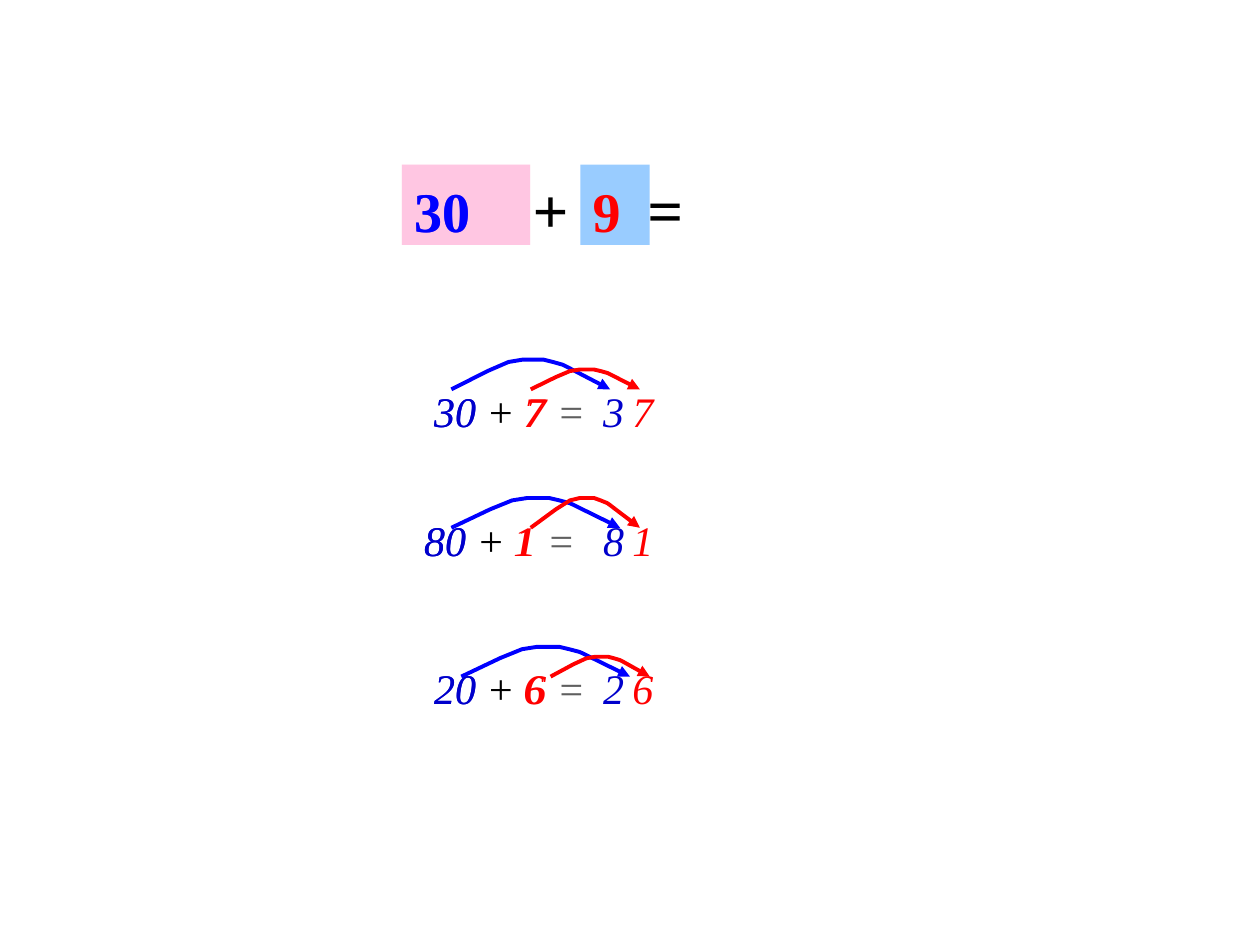
import pptx
import pptx.util
import pptx.dml.color
import pptx.enum.shapes
import pptx.enum.text
import pptx.oxml.ns
import lxml.etree

Cm = pptx.util.Cm
Pt = pptx.util.Pt
qn = pptx.oxml.ns.qn

FONT = "Times New Roman"
COLORS = {
    "tens": "0000CC",
    "units": "FF0000",
    "bright": "0000FF",
    "sign": "000000",
    "equals": "5F5F5F",
    "pink": "FF99CC",
    "sky": "99CCFF",
}
ARC = [
    (0, 0), (0.23, 0.62), (0.36, 0.92), (0.45, 1), (0.58, 1),
    (0.64, 0.92), (0.7, 0.83), (0.72, 0.78), (0.82, 0.5), (1, 0),
]


def rgb(name):
    return pptx.dml.color.RGBColor.from_string(COLORS[name])


def style(font, size, color, bold=False, italic=False):
    font.name = FONT
    font.size = Pt(size)
    font.bold = bold
    font.italic = italic
    font.color.rgb = rgb(color)


def add_text(page, left, top, width, height=1.27):
    box = page.shapes.add_textbox(Cm(left), Cm(top), Cm(width), Cm(height))
    box.text_frame.word_wrap = True
    return box.text_frame.paragraphs[0]


def add_number(page, text, left, top, width, color):
    para = add_text(page, left, top, width)
    para.text = text
    style(para.font, 24, color, italic=True)


def add_sum(page, tens, units, left, top):
    para = add_text(page, left, top, 4.2)
    parts = [(f"{tens} ", "tens"), ("+ ", "sign"), (units, "units"), (" =", "equals")]
    for text, color in parts:
        span = para.add_run()
        span.text = text
        style(span.font, 24, color, italic=True)


def add_arc(page, start, end, base, height, color):
    points = [
        (Cm(start + (end - start) * across), Cm(base - height * up))
        for across, up in ARC
    ]
    builder = page.shapes.build_freeform(*points[0])
    builder.add_line_segments(points[1:], close=False)
    arc = builder.convert_to_shape()
    arc.shadow.inherit = False
    arc.fill.background()
    arc.line.color.rgb = rgb(color)
    arc.line.width = Pt(2.25)
    line = arc.line._get_or_add_ln()
    lxml.etree.SubElement(line, qn("a:tailEnd"), type="triangle")


def add_example(page, tens, units, left, top, base, tens_arc, units_arc):
    add_sum(page, tens, units, left, top)
    add_arc(page, *tens_arc[:2], base, tens_arc[2], "bright")
    add_arc(page, *units_arc[:2], base, units_arc[2], "units")
    add_number(page, tens, left, top, 1.6, "tens")
    add_number(page, units, left + 1.8, top, 0.95, "units")
    add_number(page, tens[0], 11.91, top, 0.95, "tens")
    add_number(page, units, 12.5, top, 0.95, "units")


def add_card(page, text, left, width, fill, color, opacity=100):
    card = page.shapes.add_shape(
        pptx.enum.shapes.MSO_SHAPE.RECTANGLE, Cm(left), Cm(3.32), Cm(width), Cm(1.62)
    )
    card.shadow.inherit = False
    card.line.fill.background()
    card.fill.solid()
    card.fill.fore_color.rgb = rgb(fill)
    if opacity < 100:
        tint = card._element.spPr.find(".//" + qn("a:srgbClr"))
        lxml.etree.SubElement(tint, qn("a:alpha"), val=str(opacity * 1000))
    frame = card.text_frame
    frame.word_wrap = True
    frame.vertical_anchor = pptx.enum.text.MSO_ANCHOR.TOP
    frame.margin_top = Cm(0.23)
    frame.margin_bottom = 0
    para = frame.paragraphs[0]
    para.text = text
    para.alignment = pptx.enum.text.PP_ALIGN.LEFT
    style(para.font, 32, color, bold=True)


def add_question(page):
    para = add_text(page, 10.49, 3.32, 5, 1.78)
    para.text = "+\t="
    style(para.font, 36, "sign", bold=True)
    stops = lxml.etree.Element(qn("a:tabLst"))
    lxml.etree.SubElement(stops, qn("a:tab"), pos=str(Cm(2.31)), algn="l")
    para._p.get_or_add_pPr().insert(0, stops)
    for layer in range(2):
        add_card(page, "30", 8.1, 2.59, "pink", "bright", opacity=33)
    add_card(page, "9", 11.7, 1.4, "sky", "units")


def main():
    deck = pptx.Presentation()
    deck.slide_width = Cm(25.4)
    deck.slide_height = Cm(19.05)
    page = deck.slides.add_slide(deck.slide_layouts[6])
    examples = [
        ("30", "7", 8.5, 7.65, 7.85, (9.1, 12.3, 0.6), (10.7, 12.9, 0.4)),
        ("80", "1", 8.3, 10.24, 10.64, (9.1, 12.5, 0.6), (10.7, 12.9, 0.6)),
        ("20", "6", 8.5, 13.23, 13.64, (9.3, 12.7, 0.6), (11.1, 13.1, 0.4)),
    ]
    for example in examples:
        add_example(page, *example)
    add_question(page)
    deck.save("out.pptx")


if __name__ == "__main__":
    main()
